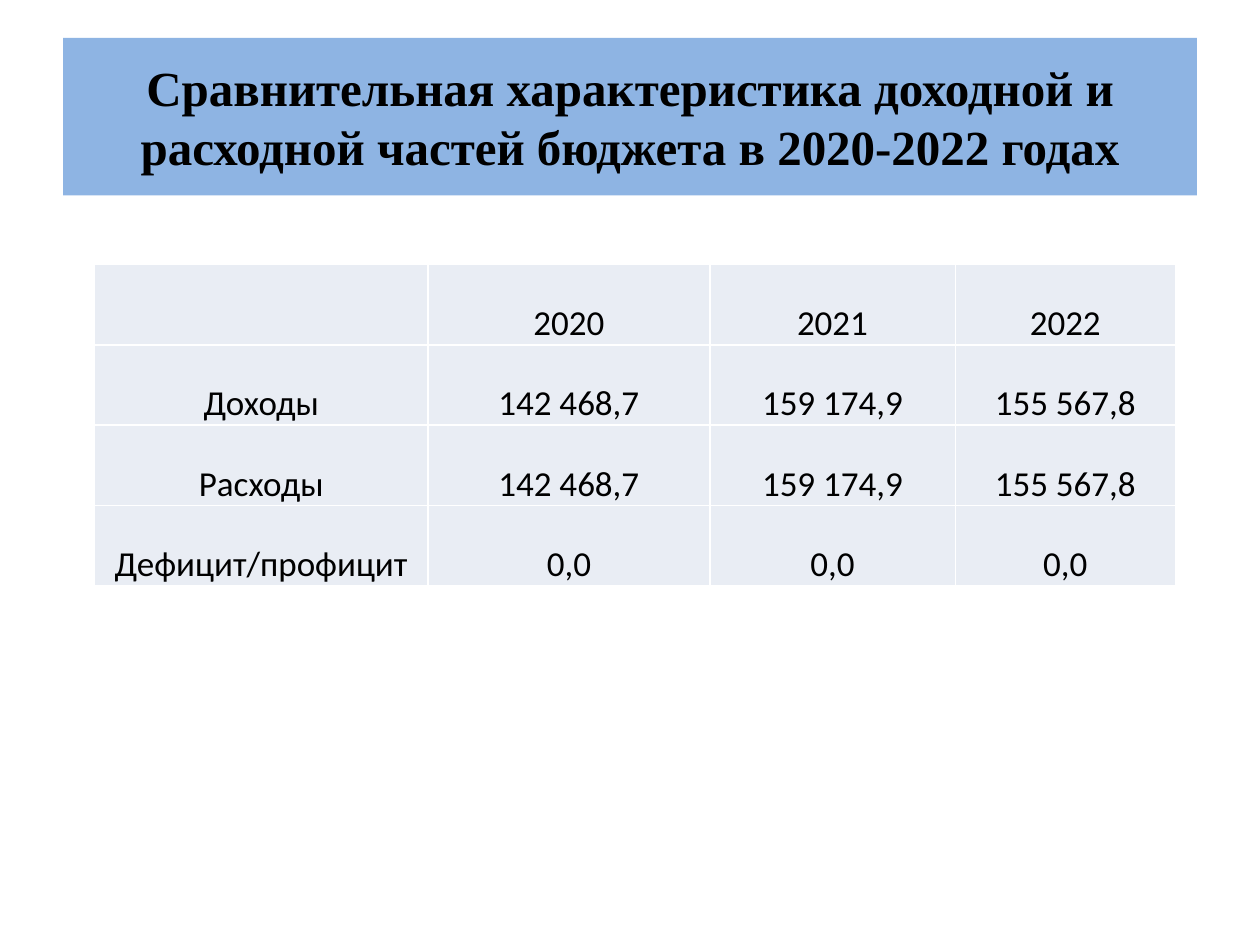
from lxml import etree
from pptx import Presentation
from pptx.dml.color import RGBColor
from pptx.enum import text as enum_text
from pptx.oxml import ns
from pptx.util import Inches, Pt

COLORS = {"title": "8EB4E3", "cell": "E9EDF4", "border": "FFFFFF", "text": "000000"}
TITLE = "Сравнительная характеристика доходной и расходной частей бюджета в 2020-2022 годах"
BUDGET = [
    ["", "2020", "2021", "2022"],
    ["Доходы", "142 468,7", "159 174,9", "155 567,8"],
    ["Расходы", "142 468,7", "159 174,9", "155 567,8"],
    ["Дефицит/профицит", "0,0", "0,0", "0,0"],
]
COLUMN_SHARES = [2.65, 2.24, 1.95, 1.75]


def fill_solid(target, color):
    target.fill.solid()
    target.fill.fore_color.rgb = RGBColor.from_string(COLORS[color])


def write_text(frame, content, *, font="Calibri", size=20, bold=False, color="text"):
    paragraph = frame.paragraphs[0]
    paragraph.alignment = enum_text.PP_ALIGN.CENTER
    run = paragraph.add_run()
    run.text = content
    run.font.name = font
    run.font.size = Pt(size)
    run.font.bold = bold
    run.font.color.rgb = RGBColor.from_string(COLORS[color])


def add_borders(cell, color="border", width=1):
    properties = cell._tc.get_or_add_tcPr()
    for side in ("lnL", "lnR", "lnT", "lnB"):
        line = etree.SubElement(properties, ns.qn(f"a:{side}"), w=str(Pt(width)))
        fill = etree.SubElement(line, ns.qn("a:solidFill"))
        etree.SubElement(fill, ns.qn("a:srgbClr"), val=COLORS[color])


def place_title(slide, left, top, width, height):
    title = slide.shapes.title
    title.left, title.top, title.width, title.height = left, top, width, height
    fill_solid(title, "title")
    frame = title.text_frame
    frame.word_wrap = True
    frame.vertical_anchor = enum_text.MSO_ANCHOR.MIDDLE
    write_text(frame, TITLE, font="Times New Roman", size=28, bold=True)


def format_cell(cell, content):
    add_borders(cell)
    fill_solid(cell, "cell")
    cell.vertical_anchor = enum_text.MSO_ANCHOR.BOTTOM
    cell.margin_left = cell.margin_right = cell.margin_top = Inches(0.01)
    cell.margin_bottom = 0
    if content:
        write_text(cell.text_frame, content)


def place_budget_table(slide, left, top, width, height):
    frame = slide.shapes.add_table(len(BUDGET), len(COLUMN_SHARES), left, top, width, height)
    table = frame.table
    table.first_row = table.horz_banding = False
    for column, share in zip(table.columns, COLUMN_SHARES):
        column.width = int(width * share / sum(COLUMN_SHARES))
    for row, values in zip(table.rows, BUDGET):
        for cell, content in zip(row.cells, values):
            format_cell(cell, content)


def main():
    presentation = Presentation()
    presentation.slide_width, presentation.slide_height = Inches(10), Inches(7.5)
    slide = presentation.slides.add_slide(presentation.slide_layouts[5])
    place_title(slide, Inches(0.5), Inches(0.3), Inches(9), Inches(1.25))
    place_budget_table(slide, Inches(0.75), Inches(2.1), Inches(8.58), Inches(2.55))
    presentation.save("out.pptx")


if __name__ == "__main__":
    main()
